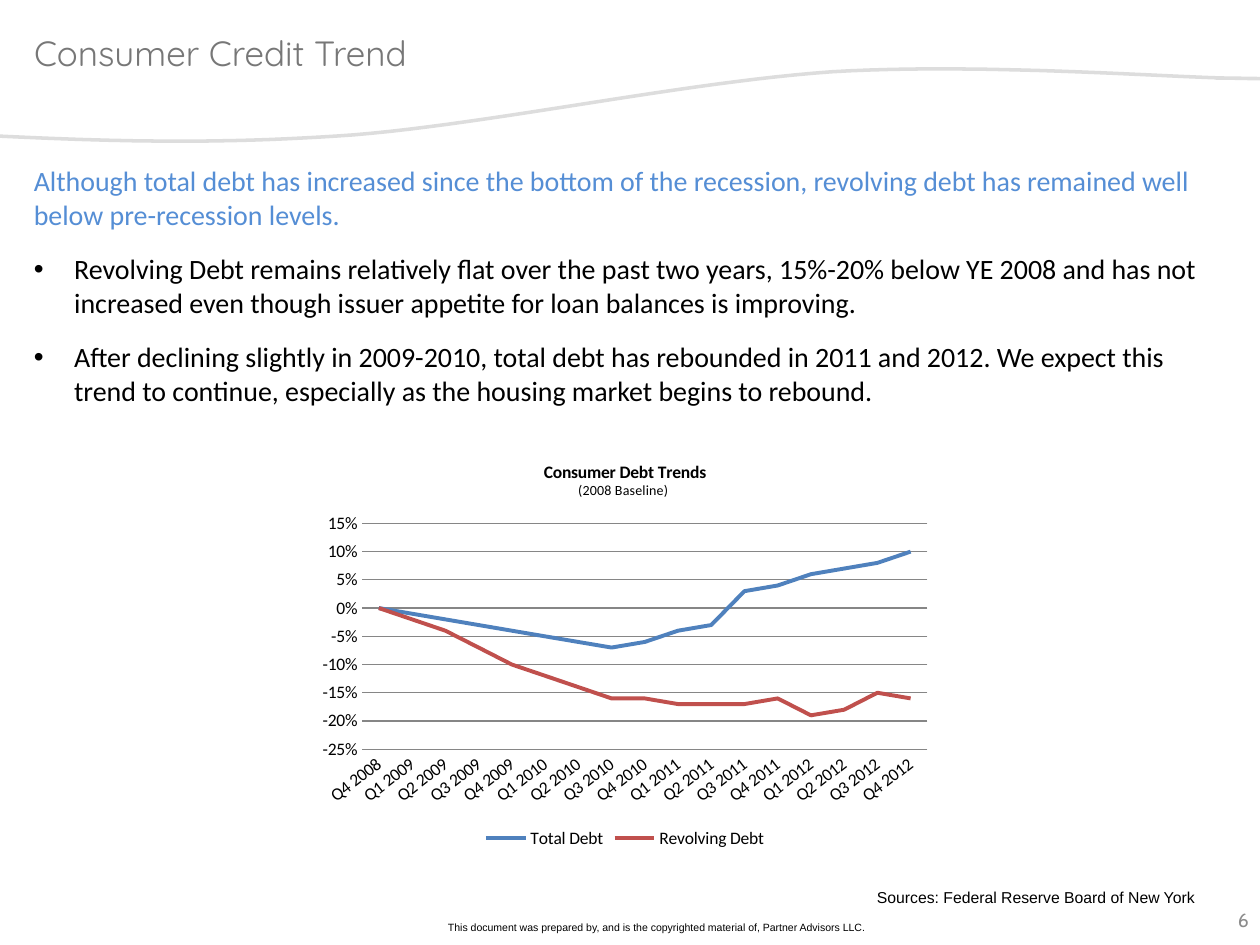
from lxml import etree
from pptx import Presentation
from pptx.chart.data import CategoryChartData
from pptx.dml.color import RGBColor
from pptx.enum.chart import (XL_AXIS_CROSSES, XL_CHART_TYPE, XL_LEGEND_POSITION,
                             XL_TICK_LABEL_POSITION, XL_TICK_MARK)
from pptx.enum.text import MSO_ANCHOR, PP_ALIGN
from pptx.oxml.ns import qn
from pptx.util import Inches, Pt

LEFT, CENTER, RIGHT = PP_ALIGN.LEFT, PP_ALIGN.CENTER, PP_ALIGN.RIGHT
TOP, MIDDLE = MSO_ANCHOR.TOP, MSO_ANCHOR.MIDDLE
LINE, BOTTOM = XL_CHART_TYPE.LINE, XL_LEGEND_POSITION.BOTTOM
NEXT, NONE = XL_TICK_LABEL_POSITION.NEXT_TO_AXIS, XL_TICK_MARK.NONE
LOWEST = XL_AXIS_CROSSES.MINIMUM

BLACK = RGBColor(0, 0, 0)
BLUE = RGBColor(0x55, 0x8E, 0xD5)
GRAY = RGBColor(0x77, 0x77, 0x77)
PALE = RGBColor(0x8C, 0x8C, 0x8C)
WAVE = RGBColor(0xDD, 0xDD, 0xDD)
GRID = RGBColor(0x86, 0x86, 0x86)

TITLE = "Consumer Credit Trend"
LEAD = ("Although total debt has increased since the bottom of the recession, "
        "revolving debt has remained well below pre-recession levels.")
POINTS = [
    "Revolving Debt remains relatively flat over the past two years, 15%-20% "
    "below YE 2008 and has not increased even though issuer appetite for loan "
    "balances is improving.",
    "After declining slightly in 2009-2010, total debt has rebounded in 2011 "
    "and 2012. We expect this trend to continue, especially as the housing "
    "market begins to rebound.",
]
# text, box, alignment, anchor, font
NOTES = [
    ("6", (9.58, 7.1, 0.43, 0.4), RIGHT, MIDDLE,
     dict(name="Cabin", size=Pt(11), color=PALE)),
    ("This document was prepared by, and is the copyrighted material of, "
     "Partner Advisors LLC.", (3, 7.26, 4.42, 0.2), CENTER, TOP,
     dict(name="Arial", size=Pt(6), color=BLACK)),
    ("Sources: Federal Reserve Board of New York", (2.58, 7, 7, 0.25), RIGHT,
     TOP, dict(name="Arial", size=Pt(9), color=BLACK)),
]
HEADS = [("Consumer Debt Trends", 10, True), ("(2008 Baseline) ", 8, False)]
QUARTERS = ["Q4 2008"] + [f"Q{q} {year}" for year in range(2009, 2013)
                          for q in range(1, 5)]
SERIES = [
    ("Total Debt", RGBColor(0x4F, 0x81, 0xBD),
     [0, -0.01, -0.02, -0.03, -0.04, -0.05, -0.06, -0.07, -0.06, -0.04,
      -0.03, 0.03, 0.04, 0.06, 0.07, 0.08, 0.1]),
    ("Revolving Debt", RGBColor(0xC0, 0x50, 0x4D),
     [0, -0.02, -0.04, -0.07, -0.1, -0.12, -0.14, -0.16, -0.16, -0.17,
      -0.17, -0.17, -0.16, -0.19, -0.18, -0.15, -0.16]),
]
TILT = -38  # degrees, quarter labels
START = (-0.01, 1.08)
CURVES = [
    [(0.85, 1.12), (1.71, 1.15), (2.81, 1.07)],
    [(3.91, 0.98), (5.45, 0.65), (6.6, 0.57)],
    [(7.75, 0.5), (9.23, 0.61), (9.74, 0.62)],
    [(10.24, 0.63), (9.95, 0.62), (9.65, 0.62)],
]
STEPS = 24


def style(font, **look):
    font.color.rgb = look.pop("color")
    for key, value in look.items():
        setattr(font, key, value)


def place(shape, box):
    for key, value in zip(("left", "top", "width", "height"), box):
        setattr(shape, key, Inches(value))


def add_box(slide, box, anchor=TOP):
    frame = slide.shapes.add_textbox(*map(Inches, box)).text_frame
    frame.word_wrap = True
    frame.vertical_anchor = anchor
    return frame


def add_wave(slide):
    """Trace the cubic curves as short straight steps."""
    dots, start = [], START
    for curve in CURVES:
        ends = [start, *curve]
        for step in range(1, STEPS + 1):
            t = step / STEPS
            mix = ((1 - t) ** 3, 3 * t * (1 - t) ** 2, 3 * t * t * (1 - t), t ** 3)
            dots.append([Inches(sum(m * p[i] for m, p in zip(mix, ends)))
                         for i in (0, 1)])
        start = curve[-1]
    pen = slide.shapes.build_freeform(*map(Inches, START))
    pen.add_line_segments(dots, close=False)
    wave = pen.convert_to_shape()
    wave.shadow.inherit = False
    wave.fill.background()
    wave.line.color.rgb = WAVE
    wave.line.width = Pt(2)


def add_body(slide):
    frame = add_box(slide, (0.17, 1.25, 9.58, 2.05))
    look = dict(name="Calibri", size=Pt(16))
    para = frame.paragraphs[0]
    para.text = LEAD
    style(para.font, color=BLUE, **look)
    for point in POINTS:
        para = frame.add_paragraph()
        para.text = point
        para.level = 1
        para.space_before = Pt(12)
        props = para._p.get_or_add_pPr()
        props.set("marL", str(Inches(0.32)))
        props.set("indent", str(-Inches(0.32)))
        etree.SubElement(props, qn("a:buFont")).set("typeface", "Arial")
        etree.SubElement(props, qn("a:buChar")).set("char", "•")
        style(para.font, color=BLACK, **look)


def add_trend(slide):
    data = CategoryChartData(number_format="0%")
    data.categories = QUARTERS
    for name, _, values in SERIES:
        data.add_series(name, values)
    box = map(Inches, (2.46, 3.5, 5, 3.27))
    chart = slide.shapes.add_chart(LINE, *box, data).chart
    look = dict(name="Calibri", size=Pt(10), color=BLACK)
    style(chart.font, **look)

    frame = chart.chart_title.text_frame
    for i, (text, size, bold) in enumerate(HEADS):
        para = frame.add_paragraph() if i else frame.paragraphs[0]
        run = para.add_run()
        run.text = text
        style(run.font, name="Calibri", size=Pt(size), bold=bold, color=BLACK)
    chart.chart_title.include_in_layout = False

    chart.has_legend = True
    chart.legend.position = BOTTOM
    chart.legend.include_in_layout = False

    cats, vals = chart.category_axis, chart.value_axis
    for axis in (cats, vals):
        axis.major_tick_mark = axis.minor_tick_mark = NONE
        axis.tick_label_position = NEXT
        style(axis.tick_labels.font, **look)
    turn = cats._element.find(qn("c:txPr")).find(qn("a:bodyPr"))
    turn.set("rot", str(TILT * 60000))
    turn.set("vert", "horz")
    cats.format.line.color.rgb = GRID
    vals.crosses = LOWEST
    vals.format.line.fill.background()
    vals.has_major_gridlines = True
    vals.major_gridlines.format.line.color.rgb = GRID
    vals.minimum_scale, vals.maximum_scale, vals.major_unit = -0.25, 0.15, 0.05
    vals.tick_labels.number_format = "0%"
    vals.tick_labels.number_format_is_linked = False

    plot = chart.plots[0]
    plot.vary_by_categories = False
    for line, (_, color, _) in zip(plot.series, SERIES):
        line.smooth = False
        line.format.line.color.rgb = color
        line.format.line.width = Pt(2.25)


def main():
    deck = Presentation()
    deck.slide_width, deck.slide_height = Inches(10), Inches(7.5)
    slide = deck.slides.add_slide(deck.slide_layouts[5])
    add_wave(slide)

    title = slide.shapes.title
    place(title, (0.17, 0.17, 6.92, 0.5))
    title.text_frame.text = TITLE
    title.text_frame.vertical_anchor = MIDDLE
    para = title.text_frame.paragraphs[0]
    para.alignment = LEFT
    style(para.font, name="Quicksand", size=Pt(20), color=GRAY)

    add_body(slide)
    for text, box, align, anchor, look in NOTES:
        para = add_box(slide, box, anchor).paragraphs[0]
        para.text = text
        para.alignment = align
        style(para.font, **look)
    add_trend(slide)
    deck.save("out.pptx")


if __name__ == "__main__":
    main()
